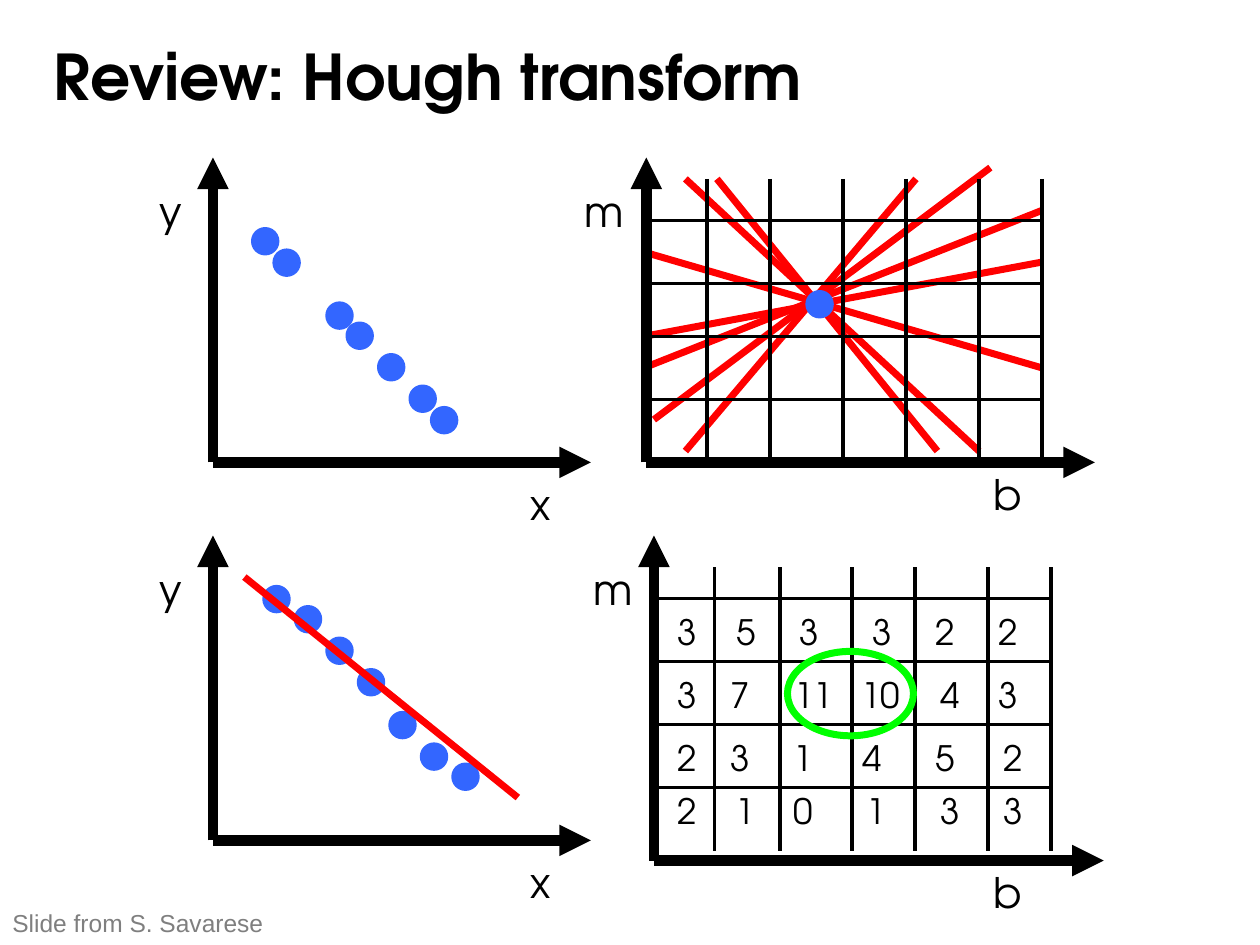
from dataclasses import dataclass

from lxml.etree import SubElement
from pptx import Presentation
from pptx.dml.color import RGBColor
from pptx.enum.shapes import MSO_CONNECTOR, MSO_SHAPE
from pptx.enum.text import MSO_AUTO_SIZE, PP_ALIGN
from pptx.oxml.ns import qn
from pptx.util import Cm, Pt


@dataclass(frozen=True)
class Theme:
    ink: str = "000000"
    point: str = "3366FF"
    vote: str = "FF0000"
    peak: str = "00FF00"
    muted: str = "7F7F7F"
    font: str = "TeX Gyre Adventor"
    credit_font: str = "Arial"
    title: int = 36
    label: int = 24
    count: int = 20
    credit: int = 14
    axis: int = 6
    stroke: int = 4
    grid: int = 2
    dot: float = 0.17
    unit: float = 2.54  # centimetres per layout unit


class Deck:
    def __init__(self, prs, theme):
        self.t = theme
        self.s = prs.slides.add_slide(prs.slide_layouts[6])

    def cm(self, *values):
        return [Cm(v * self.t.unit) for v in values]

    def line(self, x1, y1, x2, y2, color, width, arrow=False):
        sp = self.s.shapes.add_connector(
            MSO_CONNECTOR.STRAIGHT, *self.cm(x1, y1, x2, y2))
        sp.line.color.rgb = RGBColor.from_string(color)
        sp.line.width = Pt(width)
        if arrow:
            SubElement(sp.line._get_or_add_ln(), qn("a:tailEnd"), type="triangle")
        SubElement(sp._element.spPr, qn("a:effectLst"))

    def ellipse(self, x, y, w, h, color, filled=False):
        sp = self.s.shapes.add_shape(MSO_SHAPE.OVAL, *self.cm(x, y, w, h))
        sp.shadow.inherit = False
        if filled:
            sp.fill.solid()
            sp.fill.fore_color.rgb = RGBColor.from_string(color)
        else:
            sp.fill.background()
        sp.line.color.rgb = RGBColor.from_string(color)
        sp.line.width = Pt(self.t.stroke)

    def dots(self, places):
        for x, y in places:
            self.ellipse(x, y, self.t.dot, self.t.dot, self.t.point, filled=True)

    def text(self, text, x, y, w, h, size, color=None, font=None,
             align=PP_ALIGN.CENTER, bold=False, wrap=False):
        sp = self.s.shapes.add_textbox(*self.cm(x, y, w, h))
        tf = sp.text_frame
        tf.word_wrap = wrap
        tf.auto_size = MSO_AUTO_SIZE.SHAPE_TO_FIT_TEXT
        p = tf.paragraphs[0]
        p.text = text
        p.alignment = align
        p.font.name = font or self.t.font
        p.font.size = Pt(size)
        p.font.bold = bold
        p.font.color.rgb = RGBColor.from_string(color or self.t.ink)

    def axes(self, x, y, right, top):
        for end in ((x, top), (right, y)):
            self.line(x, y, *end, self.t.ink, self.t.axis, arrow=True)

    def label(self, text, x, y, w):
        self.text(text, x, y, w, 0.5, self.t.label)

    def grid(self, rows, columns, left, top, bottom):
        for y in rows:
            self.line(left, y, columns[-1], y, self.t.ink, self.t.grid)
        for x in columns:
            self.line(x, top, x, bottom, self.t.ink, self.t.grid)


def main():
    prs = Presentation()
    t = Theme()
    prs.slide_width, prs.slide_height = Cm(25.4), Cm(19.05)
    d = Deck(prs, t)

    # Image space: axes on both rows, points on a line
    point_rows = [
        (0, [(3.44, 3.25), (3.27, 3.08), (3.02, 2.83), (2.77, 2.58),
             (2.61, 2.42), (2.19, 2), (2.02, 1.83)]),
        (3, [(3.61, 6.08), (3.36, 5.92), (3.11, 5.67), (2.86, 5.33),
             (2.61, 5.08), (2.36, 4.83), (2.11, 4.67)]),
    ]
    for dy, points in point_rows:
        d.dots(points)
        d.axes(1.69, 3.67 + dy, 4.69, 1.25 + dy)
        d.label("x", 4.11, 3.75 + dy, 0.35)
        d.label("y", 1.17, 1.42 + dy, 0.36)
    d.line(1.94, 4.58, 4.11, 6.33, t.vote, t.stroke)

    # Parameter space: one line per point, meeting at a common cell
    for ends in [(5.44, 3.58, 7.27, 1.42), (7.44, 3.58, 5.69, 1.42),
                 (5.19, 3.33, 7.86, 1.33), (7.77, 3.58, 5.44, 1.42),
                 (5.11, 2.67, 8.27, 2.08), (5.11, 2.92, 8.27, 1.67),
                 (5.11, 2, 8.27, 2.92)]:
        d.line(*ends, t.vote, t.stroke)
    d.axes(5.13, 3.67, 8.69, 1.25)
    d.label("b", 7.79, 3.67, 0.4)
    d.label("m", 4.54, 1.42, 0.49)
    d.grid([1.75, 2.25, 2.67, 3.17], [5.61, 6.11, 6.69, 7.19, 7.77, 8.27],
           5.11, 1.42, 3.67)
    d.dots([(6.42, 2.33)])

    # Accumulator: vote counts in each cell, peak circled
    d.axes(5.19, 6.83, 8.76, 4.25)
    d.label("b", 7.79, 6.83, 0.4)
    d.label("m", 4.61, 4.42, 0.49)
    d.grid([4.75, 5.25, 5.75, 6.25], [5.67, 6.19, 6.76, 7.26, 7.84, 8.34],
           5.18, 4.5, 6.75)
    vote_rows = [
        (4.8, [3, 5, 3, 3, 2, 2], [5.27, 5.74, 6.24, 6.82, 7.32, 7.82]),
        (5.3, [3, 7, 11, 10, 4, 3], [5.27, 5.69, 6.19, 6.72, 7.36, 7.82]),
        (5.8, [2, 3, 1, 4, 5, 2], [5.27, 5.69, 6.19, 6.74, 7.32, 7.86]),
        (6.22, [2, 1, 0, 1, 3, 3], [5.27, 5.73, 6.19, 6.77, 7.36, 7.86]),
    ]
    for y, votes, lefts in vote_rows:
        for vote, x in zip(votes, lefts):
            d.text(str(vote), x, y, 0.54 if vote > 9 else 0.37, 0.43, t.count)
    d.ellipse(6.25, 5.17, 1, 0.67, t.peak)

    # Credit and title
    d.text("Slide from S. Savarese", 0, 7.16, 2.2, 0.34, t.credit,
           color=t.muted, font=t.credit_font, align=PP_ALIGN.LEFT)
    d.text("Review: Hough transform", 0.33, 0.25, 8.58, 0.71, t.title,
           align=PP_ALIGN.LEFT, bold=True, wrap=True)

    prs.save("out.pptx")


if __name__ == "__main__":
    main()
